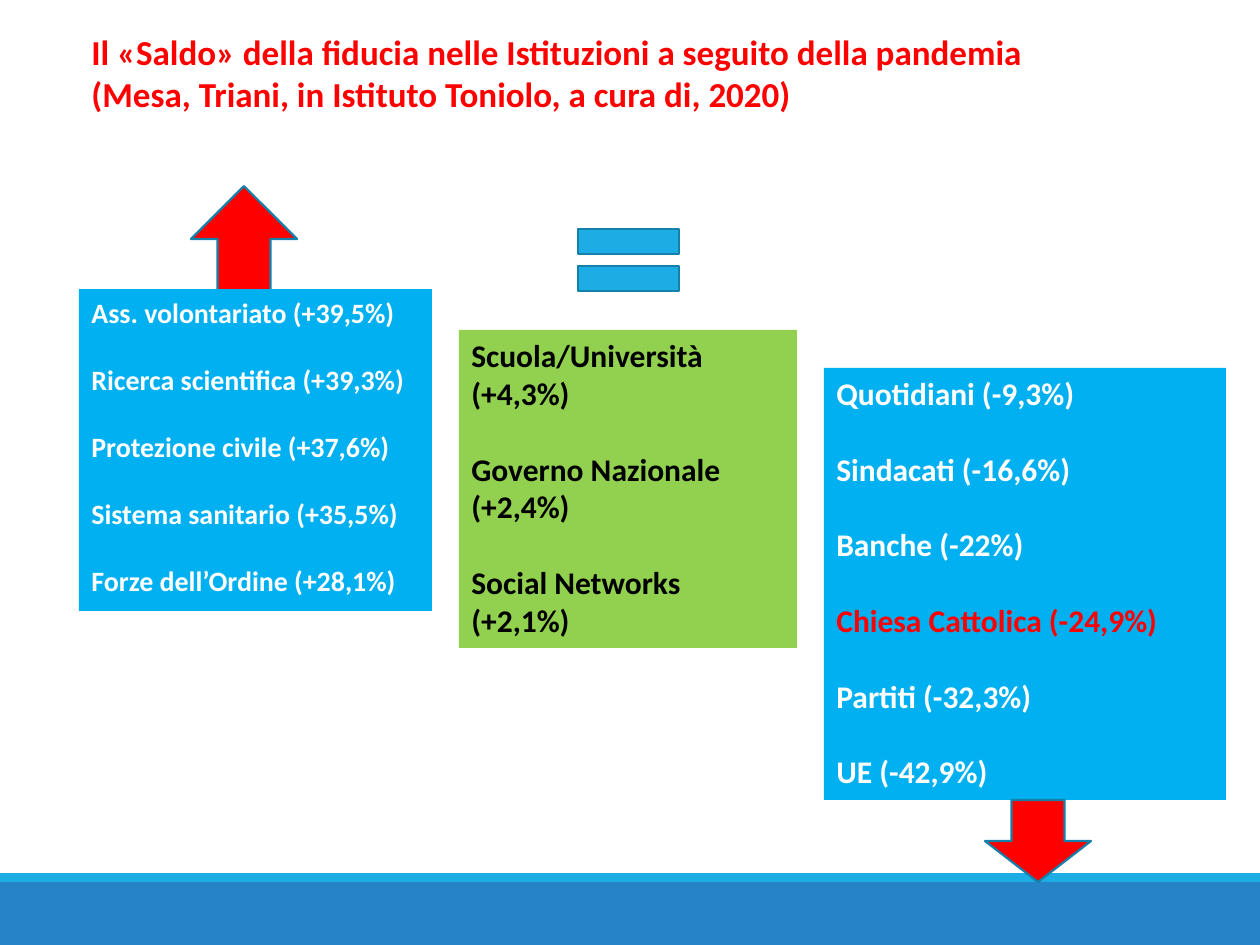
from pptx import Presentation
from pptx import util as u
from pptx.dml.color import RGBColor
from pptx.enum import shapes, text

PX = u.Inches(1) / 126
WHITE = RGBColor(0xFF, 0xFF, 0xFF)
BLACK = RGBColor(0, 0, 0)
RED = RGBColor(0xFF, 0, 0)
SKY = RGBColor(0x00, 0xB0, 0xF0)
GREEN = RGBColor(0x92, 0xD0, 0x50)
CYAN = RGBColor(0x1C, 0xAD, 0xE4)
BLUE = RGBColor(0x26, 0x83, 0xC6)
OUTLINE = RGBColor(0x15, 0x80, 0xA9)
RECT = shapes.MSO_SHAPE.RECTANGLE
ARROW = shapes.MSO_SHAPE.UP_ARROW
EQUAL = shapes.MSO_SHAPE.MATH_EQUAL

deck = Presentation()
deck.slide_width, deck.slide_height = u.Inches(10), u.Inches(7.5)
slide = deck.slides.add_slide(deck.slide_layouts[6])


def draw(kind, place, fill, outline=None):
    figure = slide.shapes.add_shape(kind, *(round(n * PX) for n in place))
    figure.shadow.inherit = False
    figure.fill.solid()
    figure.fill.fore_color.rgb = fill
    if outline is None:
        figure.line.fill.background()
    else:
        figure.line.color.rgb = outline
        figure.line.width = u.Pt(1.25)
    return figure


def write(holder, lines, size, color, gap=0):
    frame = holder.text_frame
    frame_format = {
        "word_wrap": True,
        "vertical_anchor": text.MSO_ANCHOR.TOP,
        "auto_size": text.MSO_AUTO_SIZE.SHAPE_TO_FIT_TEXT,
    }
    for key, value in frame_format.items():
        setattr(frame, key, value)
    font_format = {"name": "Calibri", "size": u.Pt(size), "bold": True}
    for i, line in enumerate(lines):
        paragraph = frame.add_paragraph() if i else frame.paragraphs[0]
        paragraph.alignment = text.PP_ALIGN.LEFT
        paragraph.space_before = u.Pt(gap if i else 0)
        run = paragraph.add_run()
        run.text = line
        for key, value in font_format.items():
            setattr(run.font, key, value)
        run.font.color.rgb = color
    return frame


draw(RECT, (0, 882, 1260, 63), BLUE)
draw(RECT, (0, 873, 1260, 9), CYAN)

draw(ARROW, (191, 186, 106, 106), RED, OUTLINE)
gains = draw(RECT, (79, 289, 353, 322), SKY)
write(gains, [
    "Ass. volontariato (+39,5%)",
    "Ricerca scientifica (+39,3%)",
    "Protezione civile (+37,6%)",
    "Sistema sanitario (+35,5%)",
    "Forze dell’Ordine (+28,1%)",
], 16, WHITE, 19.2)

draw(EQUAL, (560, 207, 137, 106), CYAN, OUTLINE)
stable = draw(RECT, (459, 330, 338, 318), GREEN)
write(stable, [
    "Scuola/Università (+4,3%)",
    "Governo Nazionale (+2,4%)",
    "Social Networks (+2,1%)",
], 18, BLACK, 21.6)

losses = draw(RECT, (824, 368, 402, 432), SKY)
losses_text = write(losses, [
    "Quotidiani (-9,3%)",
    "Sindacati (-16,6%)",
    "Banche (-22%)",
    "Chiesa Cattolica (-24,9%)",
    "Partiti (-32,3%)",
    "UE (-42,9%)",
], 18, WHITE, 21.6)
church = losses_text.paragraphs[3].runs[0]
church.font.color.rgb = RED

fall = draw(ARROW, (985, 800, 106, 82), RED, OUTLINE)
fall.rotation = 180

title = slide.shapes.add_textbox(*(round(n * PX) for n in (79, 24, 993, 97)))
write(title, [
    "Il «Saldo» della fiducia nelle Istituzioni a seguito della pandemia",
    "(Mesa, Triani, in Istituto Toniolo, a cura di, 2020)",
], 20, RED)

deck.save("out.pptx")
